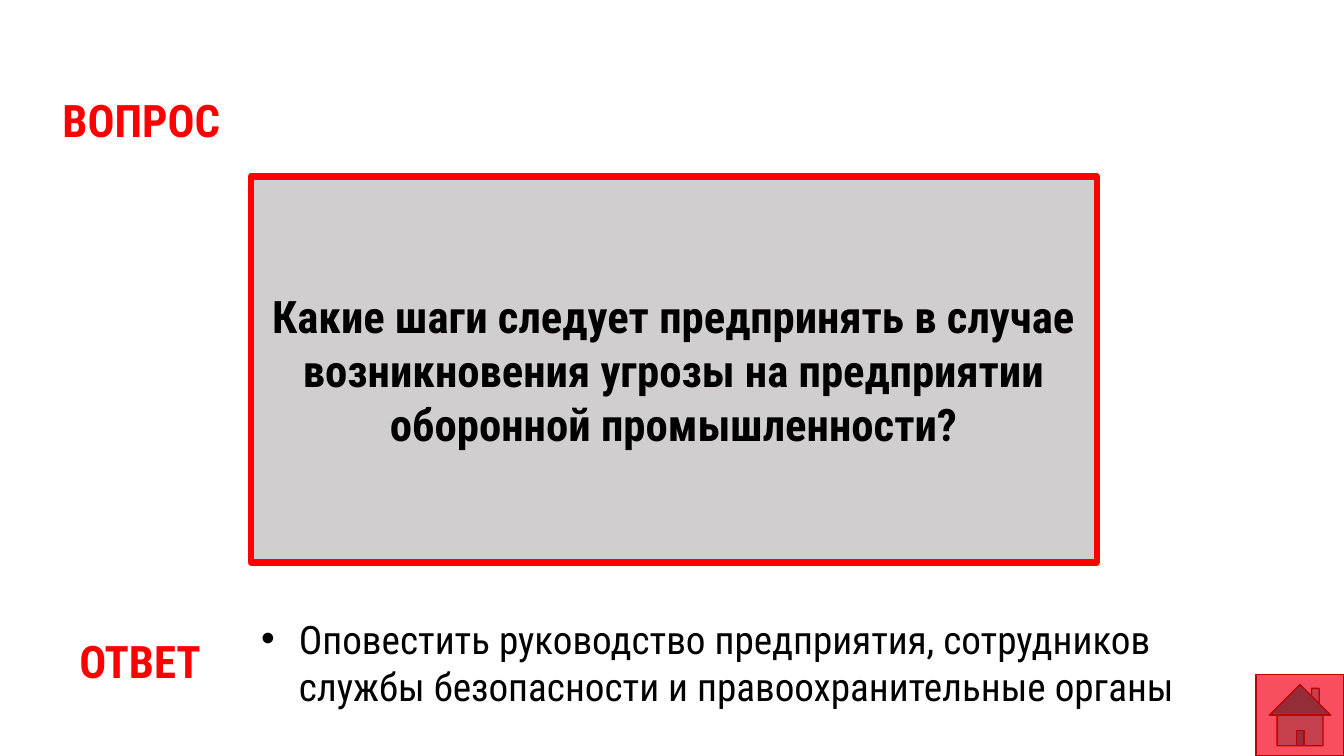
from pptx import Presentation
from pptx.dml.color import RGBColor as Rgb
from pptx.enum.shapes import MSO_SHAPE as Kind
from pptx.enum.text import MSO_ANCHOR as Anchor, MSO_AUTO_SIZE as Fit, PP_ALIGN as Align
from pptx.oxml.xmlchemy import OxmlElement as Node
from pptx.util import Pt

FACE = "Roboto Condensed"
HUES = {"red": "FF0000", "gray": "D0CECE", "ink": "000000",
        "rose": "F74F5F", "dark": "C00000"}


def hue(name):
    """Return a named colour."""
    return Rgb.from_string(HUES[name])


def place(shape, box):
    """Move a shape into a box given in points."""
    shape.left, shape.top, shape.width, shape.height = map(Pt, box)


def write(shape, text, size, color, bold, align=Align.LEFT, anchor=Anchor.TOP):
    """Fill a shape with one paragraph of styled text."""
    frame = shape.text_frame
    frame.text = text
    frame.word_wrap = True
    frame.auto_size = Fit.NONE
    frame.vertical_anchor = anchor
    para = frame.paragraphs[0]
    para.alignment = align
    para.space_before = Pt(0)
    font = para.font
    font.name, font.size, font.bold = FACE, Pt(size), bold
    font.color.rgb = hue(color)


def panel(slide, kind, box, fill, line, width):
    """Add a filled and outlined shape in a box."""
    shape = slide.shapes.add_shape(kind, *map(Pt, box))
    shape.shadow.inherit = False
    shape.fill.solid()
    shape.fill.fore_color.rgb = hue(fill)
    shape.line.color.rgb = hue(line)
    shape.line.width = Pt(width)
    return shape


def ask(slide, box, text):
    """Place the question heading and its framed text."""
    left, top, width, height = box
    title = slide.shapes.title
    place(title, (left, top, 373, 46))
    write(title, "ВОПРОС", 32, "red", True)
    inset = 142
    card = panel(slide, Kind.RECTANGLE,
                 (left + inset, top + 63.4, width - inset, height - 63.4),
                 "gray", "red", 4.5)
    write(card, text, 32, "ink", True, Align.CENTER, Anchor.MIDDLE)


def reply(slide, box, text):
    """Place the answer label and its text."""
    left, top, width, height = box
    label = slide.shapes.add_textbox(*map(Pt, (left, top + 13.7, 119, 46)))
    write(label, "ОТВЕТ", 32, "red", True)
    body = slide.placeholders[1]
    inset = 129.6
    place(body, (left + inset, top, width - inset, height))
    body.text_frame.text = text
    props = body.text_frame.paragraphs[0]._p.get_or_add_pPr()
    props.set("marL", "0")
    props.set("indent", "0")
    props.append(Node("a:buNone"))
    write(body, text, 28, "ink", False)


def home(slide, box):
    """Place the home button."""
    panel(slide, Kind.ACTION_BUTTON_HOME, box, "rose", "dark", 1)


def main():
    """Build and save the quiz slide."""
    deck = Presentation()
    deck.slide_width, deck.slide_height = Pt(960), Pt(540)
    slide = deck.slides.add_slide(deck.slide_layouts[1])
    ask(slide, (37.4, 62.6, 746, 339.2),
        "Какие шаги следует предпринять в случае возникновения угрозы "
        "на предприятии оборонной промышленности?")
    reply(slide, (49.7, 435.6, 814.3, 75),
          "Оповестить руководство предприятия, сотрудников службы "
          "безопасности и правоохранительные органы")
    home(slide, (897.3, 481.7, 62.7, 58.3))
    deck.save("out.pptx")


if __name__ == "__main__":
    main()
